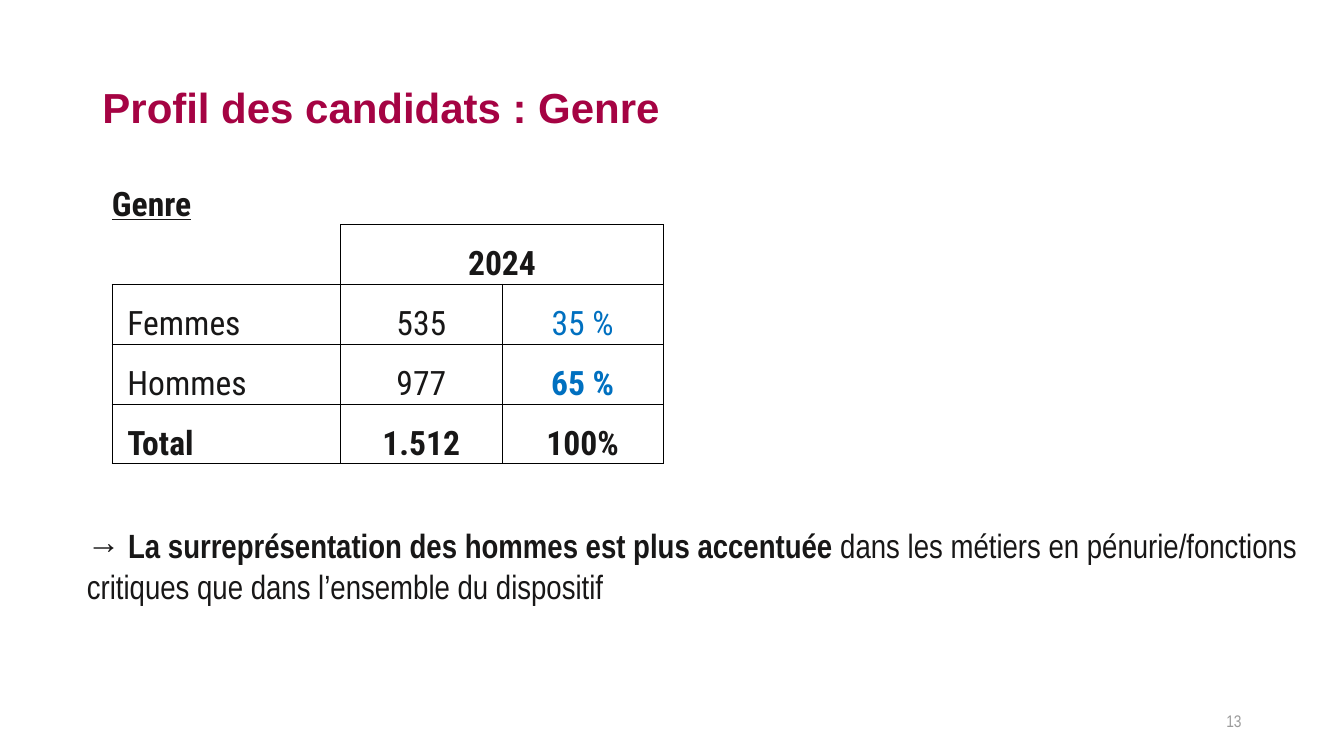
"""Build the slide on the gender profile of candidates."""
from dataclasses import dataclass

from lxml.etree import SubElement
from pptx import Presentation
from pptx.dml.color import RGBColor
from pptx.enum.text import MSO_ANCHOR, PP_ALIGN
from pptx.oxml.ns import qn
from pptx.util import Pt

INK, BLUE, CRIMSON, GREY, BLACK = "181717", "0070C0", "A50343", "9B9B9B", "000000"
ROBOTO, NARROW = "Roboto Condensed", "Arial Narrow"
COLUMN_WIDTHS = (163.4, 115.2, 115.2)
ROW_HEIGHT = 42.75
ROW_COUNT = 5


@dataclass(frozen=True)
class Entry:
    row: int
    column: int
    text: str
    color: str = INK
    bold: bool = False
    underline: bool = False


ENTRIES = (
    Entry(0, 0, "Genre", bold=True, underline=True),
    Entry(1, 1, "2024", bold=True),
    Entry(2, 0, "Femmes"),
    Entry(2, 1, "535"),
    Entry(2, 2, "35 %", BLUE),
    Entry(3, 0, "Hommes"),
    Entry(3, 1, "977"),
    Entry(3, 2, "65 %", BLUE, bold=True),
    Entry(4, 0, "Total", bold=True),
    Entry(4, 1, "1.512", bold=True),
    Entry(4, 2, "100%", bold=True),
)


def rgb(code: str) -> RGBColor:
    return RGBColor.from_string(code)


def write(paragraph, text: str, *, font=NARROW, size=24, color=INK,
          bold=False, underline=False, align=PP_ALIGN.LEFT) -> None:
    paragraph.alignment = align
    run = paragraph.add_run()
    run.text = text
    run.font.name = font
    run.font.size = Pt(size)
    run.font.bold = bold
    run.font.underline = underline
    run.font.color.rgb = rgb(color)


def is_boxed(row: int, column: int) -> bool:
    inside = 0 <= row < ROW_COUNT and 0 <= column < len(COLUMN_WIDTHS)
    return inside and row >= 1 and (row > 1 or column > 0)


def draw_borders(cell, row: int, column: int) -> None:
    neighbours = {
        "a:lnL": (row, column - 1),
        "a:lnR": (row, column + 1),
        "a:lnT": (row - 1, column),
        "a:lnB": (row + 1, column),
    }
    properties = cell._tc.get_or_add_tcPr()
    for tag, neighbour in neighbours.items():
        line = SubElement(properties, qn(tag), w=str(Pt(0.5)))
        if is_boxed(row, column) or is_boxed(*neighbour):
            fill = SubElement(line, qn("a:solidFill"))
            SubElement(fill, qn("a:srgbClr"), val=BLACK)
        else:
            SubElement(line, qn("a:noFill"))


def add_gender_table(slide) -> None:
    table = slide.shapes.add_table(
        ROW_COUNT, len(COLUMN_WIDTHS), Pt(80), Pt(117.5),
        Pt(sum(COLUMN_WIDTHS)), Pt(ROW_HEIGHT * ROW_COUNT)).table
    table.first_row = table.horz_banding = False
    for column, width in zip(table.columns, COLUMN_WIDTHS):
        column.width = Pt(width)
    for row_index, row in enumerate(table.rows):
        row.height = Pt(ROW_HEIGHT)
        for column_index, cell in enumerate(row.cells):
            draw_borders(cell, row_index, column_index)
            cell.fill.background()
            cell.vertical_anchor = MSO_ANCHOR.BOTTOM
            cell.margin_left = cell.margin_right = Pt(0)
            cell.margin_top = cell.margin_bottom = Pt(0)
    table.cell(1, 1).merge(table.cell(1, 2))
    for entry in ENTRIES:
        cell = table.cell(entry.row, entry.column)
        if entry.column == 0 and entry.row > 0:
            cell.margin_left = Pt(11)
        write(cell.text_frame.paragraphs[0], entry.text, font=ROBOTO,
              color=entry.color, bold=entry.bold, underline=entry.underline,
              align=PP_ALIGN.CENTER if entry.column else PP_ALIGN.LEFT)


def add_text_frame(slide, left: float, top: float, width: float, height: float):
    frame = slide.shapes.add_textbox(Pt(left), Pt(top), Pt(width), Pt(height)).text_frame
    frame.word_wrap = True
    return frame


def main() -> None:
    presentation = Presentation()
    presentation.slide_width, presentation.slide_height = Pt(960), Pt(540)
    slide = presentation.slides.add_slide(presentation.slide_layouts[5])

    title = slide.shapes.title
    title.left, title.top, title.width, title.height = Pt(66), Pt(26.6), Pt(828), Pt(104.4)
    title.text_frame.vertical_anchor = MSO_ANCHOR.MIDDLE
    heading = title.text_frame.paragraphs[0]
    heading.line_spacing = 0.9
    write(heading, "Profil des candidats : Genre", font="Arial", size=30,
          color=CRIMSON, bold=True)

    add_gender_table(slide)

    page_number = add_text_frame(slide, 678, 500.5, 216, 28.75)
    page_number.vertical_anchor = MSO_ANCHOR.MIDDLE
    write(page_number.paragraphs[0], "13", size=12, color=GREY, align=PP_ALIGN.RIGHT)

    finding = add_text_frame(slide, 55, 371.5, 887, 65.5).paragraphs[0]
    write(finding, "→ ")
    write(finding, "La surreprésentation des hommes est plus accentuée ", bold=True)
    write(finding, "dans les métiers en pénurie/fonctions critiques que dans "
                   "l’ensemble du dispositif")

    presentation.save("out.pptx")


if __name__ == "__main__":
    main()
